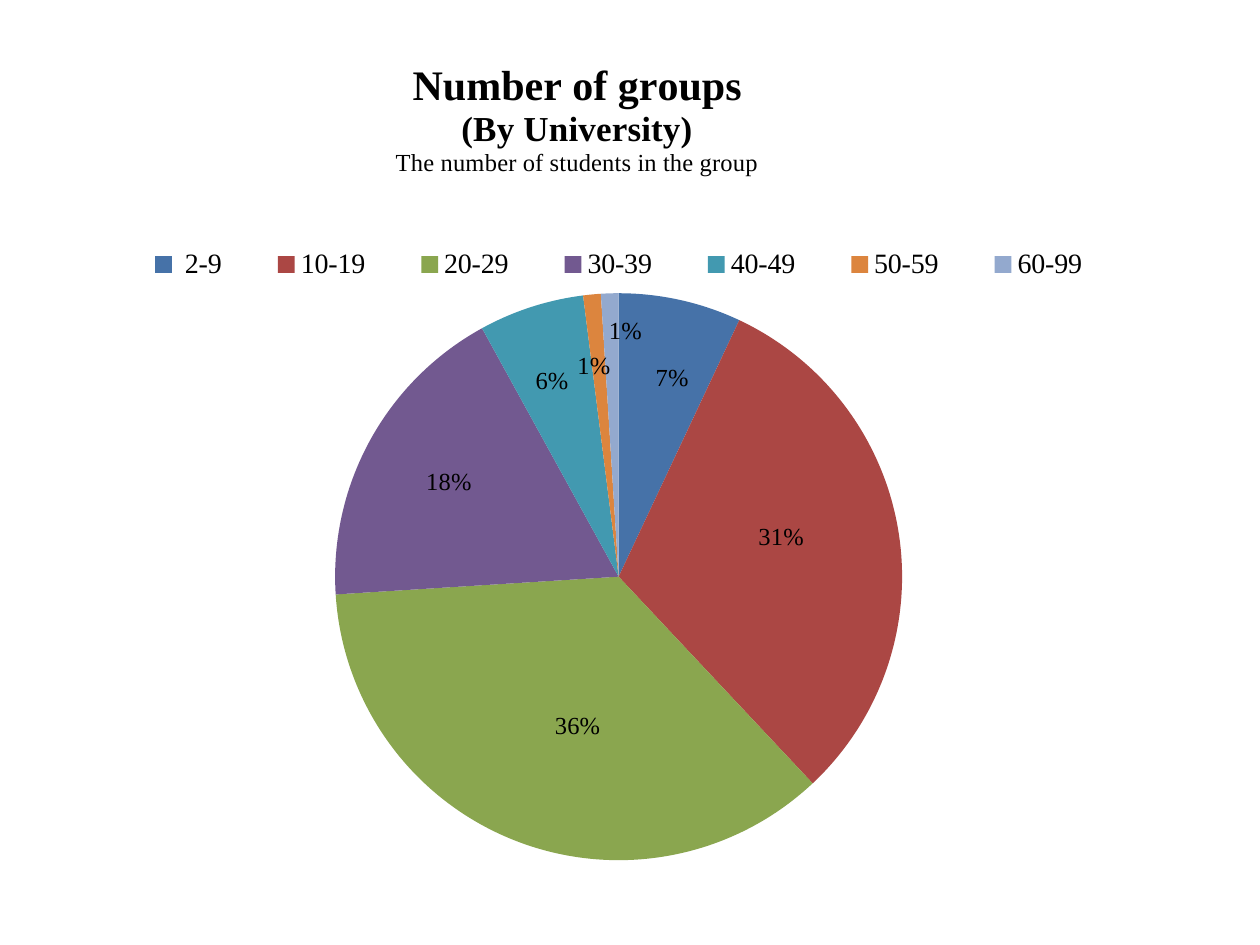
"""Build a slide with a pie chart of student groups by size."""
from lxml.etree import SubElement
from pptx import Presentation
from pptx.chart.data import CategoryChartData
from pptx.dml.color import RGBColor
from pptx.enum.chart import XL_CHART_TYPE, XL_LABEL_POSITION, XL_LEGEND_POSITION
from pptx.enum.text import PP_ALIGN
from pptx.oxml.ns import qn
from pptx.util import Cm, Pt

FACE = "Times New Roman"
BLACK = RGBColor(0, 0, 0)
BLUE = RGBColor(0x46, 0x72, 0xA8)
RED = RGBColor(0xAB, 0x47, 0x44)
GREEN = RGBColor(0x8A, 0xA6, 0x4F)
PURPLE = RGBColor(0x72, 0x59, 0x90)
TEAL = RGBColor(0x42, 0x99, 0xB0)
ORANGE = RGBColor(0xDC, 0x85, 0x3E)
PALE = RGBColor(0x93, 0xA9, 0xCE)


def write(frame, text, size, bold=False, first=False):
    para = frame.paragraphs[0] if first else frame.add_paragraph()
    para.alignment = PP_ALIGN.CENTER
    run = para.add_run()
    run.text = text
    font = run.font
    font.name, font.size, font.bold = FACE, Pt(size), bold
    font.color.rgb = BLACK


def place(node, index, edge=True, **sizes):
    for old in node.findall(qn("c:layout")):
        node.remove(old)
    layout = SubElement(node, qn("c:layout"))
    node.insert(index, layout)
    manual = SubElement(layout, qn("c:manualLayout"))
    if node.tag == qn("c:plotArea"):
        SubElement(manual, qn("c:layoutTarget")).set("val", "inner")
    if edge:
        for mode in ("xMode", "yMode"):
            SubElement(manual, qn("c:" + mode)).set("val", "edge")
    for key, val in sizes.items():
        SubElement(manual, qn("c:" + key)).set("val", str(val))


groups = [
    (" 2-9", 7, BLUE, 0.02, -0.07),
    ("10-19", 31, RED, 0.02, -0.02),
    ("20-29", 36, GREEN, 0.01, 0.02),
    ("30-39", 18, PURPLE, -0.04, -0.03),
    ("40-49", 6, TEAL, -0.02, -0.07),
    ("50-59", 1, ORANGE, -0.01, -0.08),
    ("60-99", 1, PALE, 0.01, -0.12),
]

deck = Presentation()
deck.slide_width, deck.slide_height = Cm(25.4), Cm(19.05)
slide = deck.slides.add_slide(deck.slide_layouts[6])

data = CategoryChartData()
data.categories = [group[0] for group in groups]
data.add_series("Series 1", [group[1] for group in groups])
chart = slide.shapes.add_chart(
    XL_CHART_TYPE.PIE, Cm(1.27), Cm(0.79), Cm(22.86), Cm(17.48), data
).chart
chart.font.name, chart.font.size = "Calibri", Pt(10)
chart.font.color.rgb = BLACK
root = chart.element

chart.has_title = True
frame = chart.chart_title.text_frame
write(frame, "Number of groups", 24, bold=True, first=True)
write(frame, "(By University)", 20, bold=True)
write(frame, "The number of students in the group", 14)
place(root.xpath("//c:chart/c:title")[0], 1, x=0.29, y=0.02)

chart.has_legend = True
legend = chart.legend
legend.position = XL_LEGEND_POSITION.TOP
legend.include_in_layout = False
legend.font.name, legend.font.size = FACE, Pt(16)
legend.font.color.rgb = BLACK
place(root.xpath("//c:legend")[0], 1, x=0.04, y=0.23, w=0.9, h=0.06)
place(root.xpath("//c:plotArea")[0], 0, x=0.24, y=0.29, w=0.5, h=0.66)

plot = chart.plots[0]
plot.vary_by_categories = True
series = plot.series[0]
labels = series.data_labels
labels.show_percentage, labels.show_value = True, False
labels.font.name, labels.font.size = FACE, Pt(14)
labels.font.color.rgb = BLACK

for index, (name, value, color, dx, dy) in enumerate(groups):
    point = series.points[index]
    fill = point.format.fill
    fill.solid()
    fill.fore_color.rgb = color
    point.format.line.fill.background()
    label = point.data_label
    label.font.name, label.font.size = FACE, Pt(14)
    label.font.color.rgb = BLACK
    label.position = XL_LABEL_POSITION.CENTER
    node = root.xpath("//c:ser/c:dLbls/c:dLbl")[index]
    node.find(qn("c:showVal")).set("val", "0")
    node.find(qn("c:showPercent")).set("val", "1")
    place(node, 1, edge=False, x=dx, y=dy)

deck.save("out.pptx")
